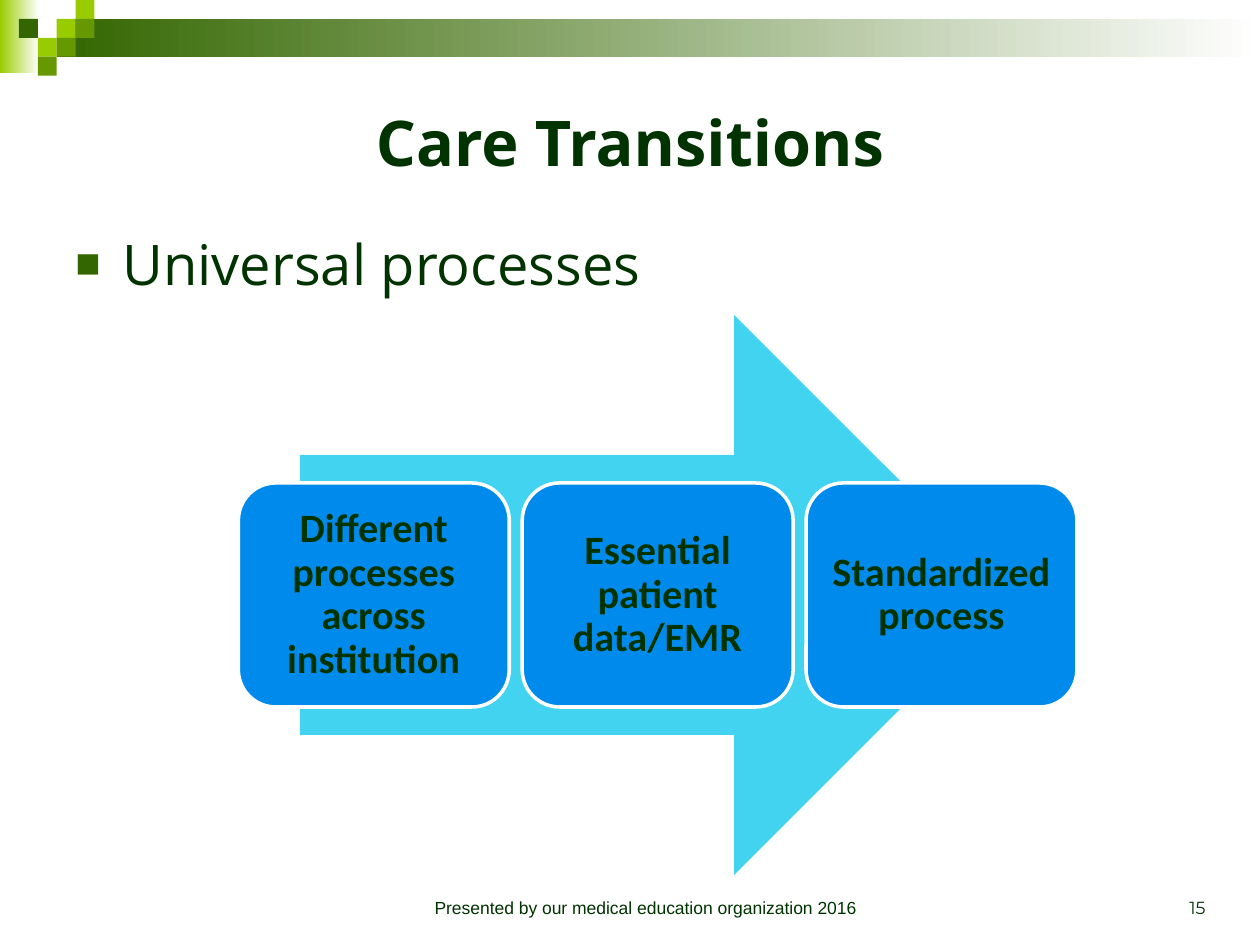
from lxml import etree
from pptx import Presentation
from pptx.dml.color import RGBColor
from pptx.enum import shapes, text
from pptx.oxml.ns import qn
from pptx.util import Pt

# Content
TITLE = "Care Transitions"
BULLET = "Universal processes"
STEPS = [
    "Different processes across institution",
    "Essential patient data/EMR",
    "Standardized process",
]
FOOTER = "Presented by our medical education organization 2016"
PAGE_NUMBER = "15"

THEME = {
    "ink": "003300", "dark": "336600", "mid": "669900", "lime": "99CC00",
    "white": "FFFFFF", "arrow": "41D3F0", "step": "008BEC",
    "title": 36, "body": 32, "label": 23, "small": 10,
}

# Corner mosaic: column, row, colour
TILE = 10.8
TILES = [
    (3, 1, "lime"), (4, 0, "lime"), (4, 1, "mid"), (2, 2, "lime"),
    (1, 1, "dark"), (3, 2, "mid"), (2, 3, "mid"),
]
BANDS = [(0, 0, 22.3, 41.8, "lime"), (32.4, 10.8, 687.6, 21.6, "dark")]

STEP_LEFT, STEP_TOP, STEP_WIDTH, STEP_HEIGHT = 136.2, 276, 154.8, 128
STEP_PITCH = 162.2


def colour(name):
    return RGBColor.from_string(THEME[name])


def place(shape, left, top, width, height):
    shape.left, shape.top = Pt(left), Pt(top)
    shape.width, shape.height = Pt(width), Pt(height)


def add_block(page, kind, area, fill, line=None):
    block = page.shapes.add_shape(kind, *map(Pt, area))
    block.shadow.inherit = False
    block.fill.solid()
    block.fill.fore_color.rgb = colour(fill)
    if line:
        block.line.color.rgb = colour(line)
        block.line.width = Pt(2)
    else:
        block.line.fill.background()
    return block


def write(shape, words, size, font, align, anchor, bold=False):
    frame = shape.text_frame
    frame.word_wrap = True
    frame.auto_size = text.MSO_AUTO_SIZE.NONE
    frame.vertical_anchor = anchor
    para = frame.paragraphs[0]
    para.text = words
    para.alignment = align
    para.font.name = font
    para.font.size = Pt(THEME[size])
    para.font.bold = bold
    para.font.color.rgb = colour("ink")
    return para


def add_text(page, area, *style):
    box = page.shapes.add_textbox(*map(Pt, area))
    return write(box, *style)


def add_bullet(para, char, name, percent):
    props = para._p.get_or_add_pPr()
    props.set("marL", str(Pt(27)))
    props.set("indent", str(-Pt(27)))
    tint = etree.SubElement(props, qn("a:buClr"))
    etree.SubElement(tint, qn("a:srgbClr"), val=THEME[name])
    etree.SubElement(props, qn("a:buSzPct"), val=str(percent * 1000))
    etree.SubElement(props, qn("a:buFont"), typeface="Arial")
    etree.SubElement(props, qn("a:buChar"), char=char)
    # The schema wants default run properties after the bullet
    props.append(props.find(qn("a:defRPr")))


def main():
    kinds, align, anchor = shapes.MSO_SHAPE, text.PP_ALIGN, text.MSO_ANCHOR
    deck = Presentation()
    deck.slide_width, deck.slide_height = Pt(720), Pt(540)
    page = deck.slides.add_slide(deck.slide_layouts[5])

    # Fading bands and mosaic
    for *area, name in BANDS:
        band = add_block(page, kinds.RECTANGLE, area, name)
        band.fill.gradient()
        band.fill.gradient_angle = 0
        for stop, tone in zip(band.fill.gradient_stops, (name, "white")):
            stop.color.rgb = colour(tone)
    for column, row, name in TILES:
        area = (column * TILE, row * TILE, TILE, TILE)
        add_block(page, kinds.RECTANGLE, area, name)

    # Title and bullet
    title = page.shapes.title
    place(title, 36, 36, 648, 90)
    write(title, TITLE, "title", "Open Sans", align.CENTER, anchor.MIDDLE, True)
    para = add_text(page, (36, 127.4, 372, 60), BULLET, "body", "Open Sans",
                    align.LEFT, anchor.TOP)
    para.space_before = Pt(6.4)
    add_bullet(para, "■", "dark", 75)

    # Footer and page number
    add_text(page, (221.8, 492, 293.8, 36), FOOTER, "small", "Arial",
             align.CENTER, anchor.BOTTOM)
    add_text(page, (528, 492, 168, 36), PAGE_NUMBER, "small", "Montserrat",
             align.RIGHT, anchor.BOTTOM)

    # Process arrow with its steps
    add_block(page, kinds.RIGHT_ARROW, (171.4, 180, 408.2, 320), "arrow")
    for index, words in enumerate(STEPS):
        area = (STEP_LEFT + index * STEP_PITCH, STEP_TOP, STEP_WIDTH, STEP_HEIGHT)
        step = add_block(page, kinds.ROUNDED_RECTANGLE, area, "step", "white")
        para = write(step, words, "label", "Calibri", align.CENTER,
                     anchor.MIDDLE, True)
        para.line_spacing = 0.9
        frame = step.text_frame
        # The rounded corners already inset the text by about 6 pt
        frame.margin_left = frame.margin_right = Pt(7)
        frame.margin_top = frame.margin_bottom = Pt(7)

    deck.save("out.pptx")


if __name__ == "__main__":
    main()
